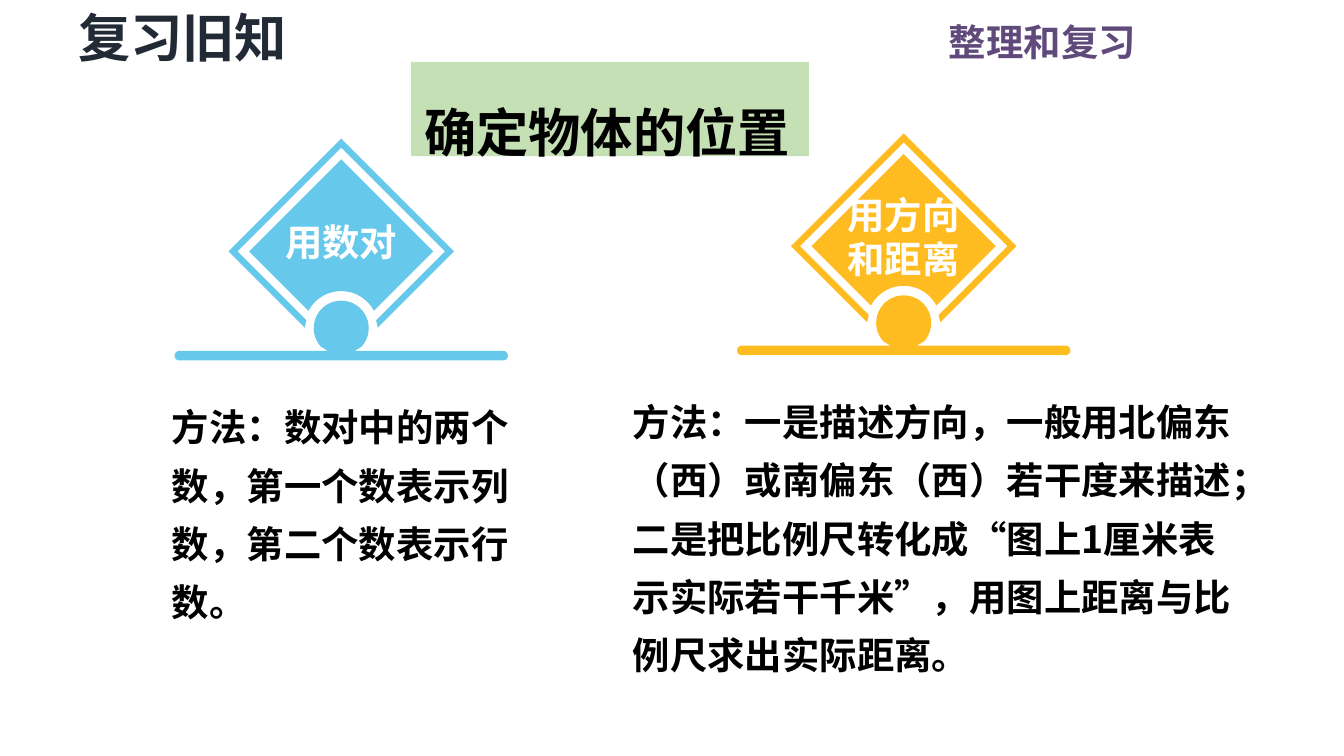
import math

from lxml import etree
from pptx import Presentation
from pptx import util as u
from pptx.dml.color import RGBColor
from pptx.enum import shapes, text
from pptx.oxml.ns import qn

FONT = "Noto Sans CJK SC"
INK = RGBColor(0x22, 0x2A, 0x35)
PURPLE = RGBColor(0x60, 0x4A, 0x7B)
BLACK = RGBColor(0, 0, 0)
WHITE = RGBColor(255, 255, 255)
GREEN = RGBColor(0xC5, 0xE0, 0xB4)
BLUE = RGBColor(0x66, 0xC8, 0xEA)
AMBER = RGBColor(0xFF, 0xBC, 0x21)

# Badge measures in cm, from the top corner of the diamond
HALF = 2.13          # outer diamond
INNER = 1.96         # inside edge of the rim
CORE = 1.74          # filled centre
BALL_Y, BALL_R, NOTCH_R = 3.58, 0.52, 0.70
BAR_Y, BAR_R, BAR_HALF = 4.10, 0.09, 3.15


def arc(x, y, radius, start, end, steps=32):
    """Points on a circle; degrees run counter-clockwise from the right."""
    angles = [math.radians(start + (end - start) * i / steps) for i in range(steps + 1)]
    return [(x + radius * math.cos(a), y - radius * math.sin(a)) for a in angles]


class ReviewSlide:
    def __init__(self, deck):
        self.slide = deck.slides.add_slide(deck.slide_layouts[5])

    def set_text(self, frame, lines, size, color, align=text.PP_ALIGN.LEFT,
                 spacing=None, anchor=text.MSO_ANCHOR.TOP, wrap=True):
        frame.word_wrap = wrap
        frame.auto_size = text.MSO_AUTO_SIZE.NONE
        frame.vertical_anchor = anchor
        for i, line in enumerate(lines):
            paragraph = frame.add_paragraph() if i else frame.paragraphs[0]
            paragraph.alignment = align
            if spacing:
                paragraph.line_spacing = spacing
            run = paragraph.add_run()
            run.text = line
            font = run.font
            font.size, font.bold, font.name = u.Pt(size), True, FONT
            font.color.rgb = color
            east_asian = etree.SubElement(run._r.get_or_add_rPr(), qn("a:ea"))
            east_asian.set("typeface", FONT)

    def title(self, left, top, width, height, line):
        title = self.slide.shapes.title
        title.left, title.top = u.Cm(left), u.Cm(top)
        title.width, title.height = u.Cm(width), u.Cm(height)
        frame = title.text_frame
        frame.margin_left = frame.margin_right = u.Cm(0.18)
        frame.margin_top = frame.margin_bottom = u.Cm(0.1)
        self.set_text(frame, [line], 28, INK)

    def label(self, left, top, width, height, line, color=BLACK, **style):
        label = self.slide.shapes.add_textbox(
            u.Cm(left), u.Cm(top), u.Cm(width), u.Cm(height))
        self.set_text(label.text_frame, [line], 20, color, **style)

    def paint(self, shape, color):
        shape.shadow.inherit = False
        shape.fill.solid()
        shape.fill.fore_color.rgb = color
        shape.line.fill.background()

    def banner(self, left, top, width, height, line):
        banner = self.slide.shapes.add_shape(
            shapes.MSO_SHAPE.RECTANGLE,
            u.Cm(left), u.Cm(top), u.Cm(width), u.Cm(height))
        self.paint(banner, GREEN)
        self.set_text(banner.text_frame, [line], 28, BLACK, spacing=1.5, wrap=False)

    def outline(self, x, y, contours, color):
        contours = [[(u.Cm(x + px), u.Cm(y + py)) for px, py in contour]
                    for contour in contours]
        builder = self.slide.shapes.build_freeform(*contours[0][0])
        for i, contour in enumerate(contours):
            if i:
                builder.move_to(*contour[0])
            builder.add_line_segments(contour[1:], close=True)
        shape = builder.convert_to_shape()
        self.paint(shape, color)
        return shape

    def badge(self, x, y, lines, color):
        # Diamond: filled centre with a round notch, inside an open rim
        core = [(0, HALF - CORE), (CORE, HALF),
                *arc(0, BALL_Y, NOTCH_R, 28, 152), (-CORE, HALF)]
        rim_right = [(0, 0), (HALF, HALF), (0.69, 3.57), (0.66, 3.43), (INNER, HALF)]
        rim_left = [(-px, py) for px, py in reversed(rim_right[1:])]
        rim = rim_right + [(0, HALF - INNER)] + rim_left
        diamond = self.outline(x, y, [core, rim], color)
        frame = diamond.text_frame
        frame.margin_top, frame.margin_bottom = u.Cm(0.38), u.Cm(0.05)
        self.set_text(frame, lines, 20, WHITE, text.PP_ALIGN.CENTER,
                      anchor=text.MSO_ANCHOR.MIDDLE)

        # Ball standing on a round-ended bar
        end = BAR_HALF - BAR_R
        stand = [*arc(0, BALL_Y, BALL_R, 222, -42), (0.25, BAR_Y - BAR_R),
                 *arc(end, BAR_Y, BAR_R, 90, -90, 8),
                 *arc(-end, BAR_Y, BAR_R, -90, -270, 8), (-0.25, BAR_Y - BAR_R)]
        self.outline(x, y, [stand], color)


def main():
    deck = Presentation()
    deck.slide_width, deck.slide_height = u.Cm(25.4), u.Cm(14.28)
    page = ReviewSlide(deck)

    # Headings
    page.label(14.71, 0.23, 7.01, 1.11, "整理和复习", PURPLE, align=text.PP_ALIGN.RIGHT)
    page.title(1.3, 0, 5.13, 1.4, "复习旧知")

    # Two ways to locate an object
    page.badge(6.45, 2.62, ["用数对"], BLUE)
    page.label(3, 7.26, 7.19, 6.25,
               "方法：数对中的两个数，第一个数表示列数，第二个数表示行数。", spacing=1.3)
    page.badge(17.08, 2.52, ["用方向", "和距离"], AMBER)
    page.label(11.71, 7.16, 12.09, 6.25,
               "方法：一是描述方向，一般用北偏东（西）或南偏东（西）若干度来描述；"
               "二是把比例尺转化成“图上1厘米表示实际若干千米”，"
               "用图上距离与比例尺求出实际距离。", spacing=1.3)

    # Topic
    page.banner(7.77, 1.17, 7.52, 1.78, "确定物体的位置")

    deck.save("out.pptx")


if __name__ == "__main__":
    main()
